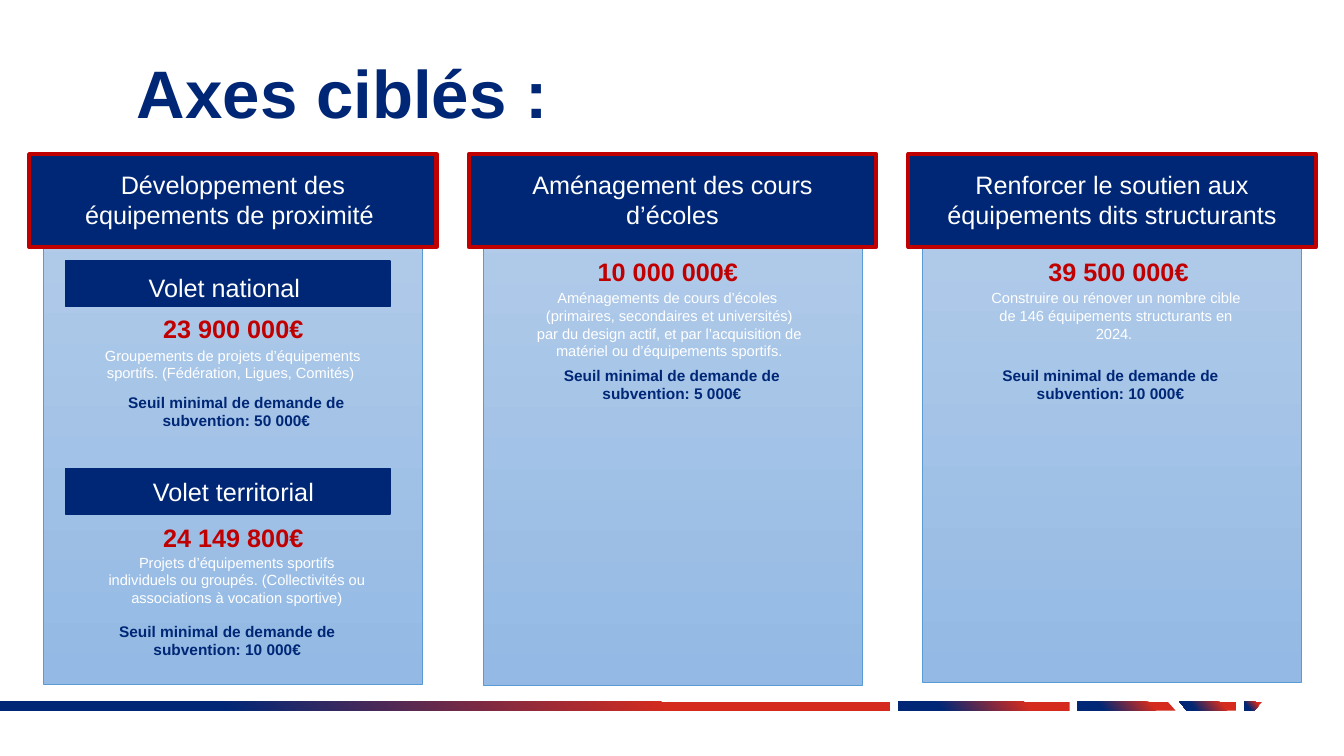
from dataclasses import dataclass

from pptx import Presentation
from pptx.dml.color import RGBColor
from pptx.enum.shapes import MSO_SHAPE
from pptx.enum.text import MSO_ANCHOR, PP_ALIGN
from pptx.util import Inches, Pt


@dataclass(frozen=True)
class Theme:
    """Colours, font and type sizes of the slide."""
    navy: str = "002776"
    crimson: str = "C00000"
    flag_red: str = "D52B1E"
    white: str = "FFFFFF"
    panel_top: str = "B1CBE9"
    panel_bottom: str = "93B9E4"
    panel_line: str = "5B9BD5"
    font: str = "Arial"
    title: float = 48
    heading: float = 18
    body: float = 10.5
    threshold: float = 11


THEME = Theme()
COLUMN_PITCH = 4.36
BAR_TOP, BAR_BOTTOM = 6.96, 7.05

HEADINGS = [
    "Développement des équipements de proximité ",
    "Aménagement des cours d’écoles",
    "Renforcer le soutien aux équipements dits structurants",
]
PANEL_TOPS = [2.19, 2.2, 2.17]

SECTIONS = [("Volet national ", 2.59, 0.84, 2.65), ("Volet territorial ", 4.65, 0.93, 4.68)]

AMOUNTS = [
    ("23 900 000€", 1.52, 3.06),
    ("24 149 800€", 1.52, 5.13),
    ("10 000 000€", 5.83, 2.49),
    ("39 500 000€", 10.3, 2.49),
]
DESCRIPTIONS = [
    (["Groupements de projets d’équipements sportifs. (Fédération, Ligues, Comités) "],
     0.89, 3.39, 0.63),
    (["Projets d’équipements sportifs individuels ou groupés. "
      "(Collectivités ou associations à vocation sportive)"], 0.93, 5.44, 0.81),
    (["Aménagements de cours d’écoles ",
      "(primaires, secondaires et universités) par du design actif, "
      "et par l’acquisition de matériel ou d’équipements sportifs."], 5.22, 2.82, 0.98),
    (["Construire ou rénover un nombre cible de 146 équipements structurants en 2024. "],
     9.65, 2.82, 0.81),
]
THRESHOLDS = [
    ("50 000€", 1.17, 3.85),
    ("10 000€", 1.08, 6.12),
    ("5 000€", 5.49, 3.58),
    ("10 000€", 9.84, 3.58),
]

BARS = [
    (0, 8.83, 8.83, 0),
    (8.91, 10.61, 10.61, 8.91),
    (10.69, 11.58, 11.66, 10.69),
    (11.7, 12.26, 12.26, 11.77),
    (12.34, 12.52, 12.44, 12.34),
]


def colour(value):
    """Turn a hex string into a colour."""
    return RGBColor.from_string(value)


def fill_gradient(shape, angle, stops):
    """Fill a shape with a two-stop linear gradient."""
    shape.fill.gradient()
    shape.fill.gradient_angle = angle
    for stop, (position, value) in zip(shape.fill.gradient_stops, stops):
        stop.position = position
        stop.color.rgb = colour(value)


def add_bar(page, top_left, top_right, bottom_right, bottom_left):
    """Draw one segment of the footer ribbon."""
    builder = page.shapes.build_freeform(Inches(top_left), Inches(BAR_TOP))
    builder.add_line_segments([
        (Inches(top_right), Inches(BAR_TOP)),
        (Inches(bottom_right), Inches(BAR_BOTTOM)),
        (Inches(bottom_left), Inches(BAR_BOTTOM)),
    ])
    bar = builder.convert_to_shape()
    bar.shadow.inherit = False
    bar.line.fill.background()
    fill_gradient(bar, 220, [(0.25, THEME.flag_red), (0.75, THEME.navy)])


def add_rectangle(page, left, top, width, height, line, weight):
    """Draw a navy rectangle with an outline."""
    rectangle = page.shapes.add_shape(
        MSO_SHAPE.RECTANGLE, Inches(left), Inches(top), Inches(width), Inches(height))
    rectangle.shadow.inherit = False
    rectangle.fill.solid()
    rectangle.fill.fore_color.rgb = colour(THEME.navy)
    rectangle.line.color.rgb = colour(line)
    rectangle.line.width = Pt(weight)
    return rectangle


def add_text(page, lines, left, top, width, height, size, value,
             bold=False, align=PP_ALIGN.CENTER, anchor=MSO_ANCHOR.TOP):
    """Place a wrapped text box with one paragraph per line."""
    box = page.shapes.add_textbox(Inches(left), Inches(top), Inches(width), Inches(height))
    frame = box.text_frame
    frame.word_wrap = True
    frame.vertical_anchor = anchor
    frame.text = "\n".join(lines)
    for para in frame.paragraphs:
        para.alignment = align
        para.font.name = THEME.font
        para.font.size = Pt(size)
        para.font.bold = bold
        para.font.color.rgb = colour(value)


def add_column(page, index):
    """Draw a column panel with its framed heading."""
    offset = index * COLUMN_PITCH
    panel = add_rectangle(page, 0.43 + offset, PANEL_TOPS[index], 3.76, 4.6,
                          THEME.panel_line, 0.5)
    fill_gradient(panel, 270, [(0, THEME.panel_top), (1, THEME.panel_bottom)])
    add_rectangle(page, 0.29 + offset, 1.53, 4.04, 0.92, THEME.crimson, 3)
    add_text(page, [HEADINGS[index]], 0.43 + offset, 1.63, 3.76, 0.71,
             THEME.heading, THEME.white)


def main():
    """Build and save the slide."""
    deck = Presentation()
    deck.slide_width, deck.slide_height = Inches(13.33), Inches(7.5)
    page = deck.slides.add_slide(deck.slide_layouts[6])
    for bar in BARS:
        add_bar(page, *bar)
    add_text(page, ["Axes ciblés :"], 1.26, 0.45, 11.78, 0.92, THEME.title, THEME.navy,
             bold=True, align=PP_ALIGN.LEFT, anchor=MSO_ANCHOR.MIDDLE)
    for index in range(len(HEADINGS)):
        add_column(page, index)
    for label, band_top, left, top in SECTIONS:
        add_rectangle(page, 0.65, band_top, 3.22, 0.45, THEME.navy, 1)
        add_text(page, [label], left, top, 2.84, 0.4, THEME.heading, THEME.white)
    for amount, left, top in AMOUNTS:
        add_text(page, [amount], left, top, 2.35, 0.4, THEME.heading, THEME.crimson,
                 bold=True, align=PP_ALIGN.LEFT)
    for lines, left, top, height in DESCRIPTIONS:
        add_text(page, lines, left, top, 2.84, height, THEME.body, THEME.white)
    for amount, left, top in THRESHOLDS:
        add_text(page, [f"Seuil minimal de demande de subvention: {amount}"],
                 left, top, 2.35, 0.47, THEME.threshold, THEME.navy, bold=True)
    deck.save("out.pptx")


if __name__ == "__main__":
    main()
